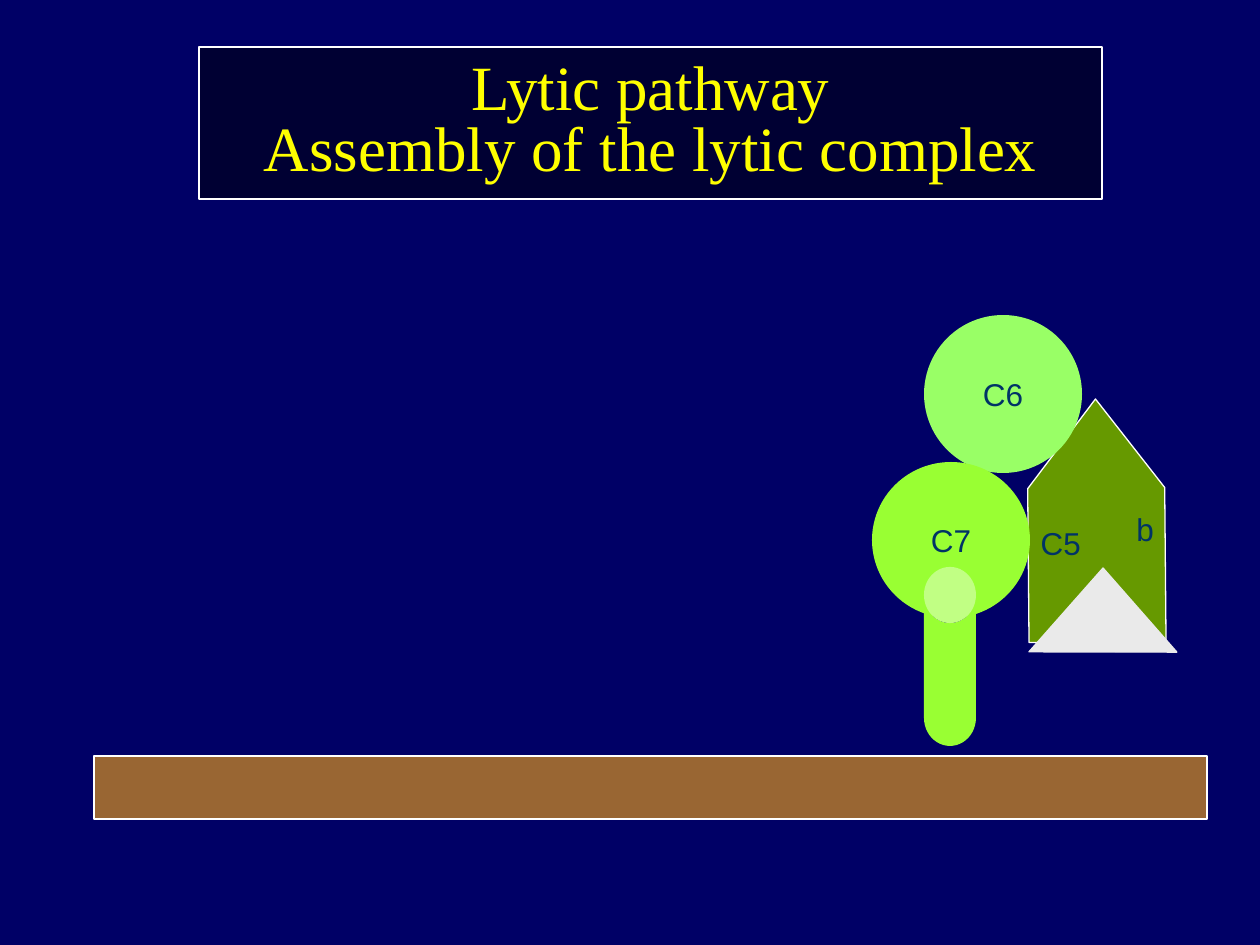
"""Build the slide on assembly of the lytic complex."""
from dataclasses import dataclass, field
from typing import Any, Optional

import pptx
import pptx.dml.color
import pptx.enum.shapes
import pptx.enum.text
import pptx.util

RGBColor = pptx.dml.color.RGBColor
Shape = pptx.enum.shapes.MSO_SHAPE
Anchor = pptx.enum.text.MSO_ANCHOR
CENTER = pptx.enum.text.PP_ALIGN.CENTER

PX = 914400 / 126
NAVY = RGBColor(0x00, 0x00, 0x66)
DARK_NAVY = RGBColor(0x00, 0x00, 0x33)
YELLOW = RGBColor(0xFF, 0xFF, 0x00)
WHITE = RGBColor(0xFF, 0xFF, 0xFF)
BROWN = RGBColor(0x99, 0x66, 0x33)
OLIVE = RGBColor(0x66, 0x99, 0x00)
PALE_GREY = RGBColor(0xEA, 0xEA, 0xEA)
MINT = RGBColor(0x99, 0xFF, 0x66)
LIME = RGBColor(0x99, 0xFF, 0x33)
LABEL_BLUE = RGBColor(0x00, 0x33, 0x66)


@dataclass(frozen=True)
class Part:
    """One piece of the complex, placed in px."""

    kind: Any
    box: tuple[int, int, int, int]
    fill: RGBColor
    line: Optional[RGBColor] = None
    label: str = ""
    rotation: float = 0
    adjustment: Optional[float] = None
    frame: dict[str, Any] = field(default_factory=dict)
    direction: str = "horz"


MIDDLE = {"vertical_anchor": Anchor.MIDDLE, "word_wrap": False}
TOP = {"vertical_anchor": Anchor.TOP, "word_wrap": True}

PARTS = [
    Part(Shape.RECTANGLE, (94, 756, 1113, 63), BROWN, WHITE),
    Part(Shape.PENTAGON, (975, 452, 243, 137), OLIVE, WHITE, "C5", 269.5, 0.65, MIDDLE, "eaVert"),
    Part(Shape.RECTANGLE, (1124, 504, 32, 63), OLIVE, label="b", frame=TOP),
    Part(Shape.FLOWCHART_MERGE, (1029, 568, 148, 84), PALE_GREY, PALE_GREY, rotation=180.1),
    Part(Shape.OVAL, (924, 315, 158, 158), MINT, label="C6", frame=MIDDLE),
    Part(Shape.OVAL, (872, 462, 158, 156), LIME, label="C7", frame=MIDDLE),
    Part(Shape.CAN, (924, 567, 52, 179), LIME, adjustment=1.08),
]


def set_all(target: Any, values: dict[str, Any]) -> None:
    """Set every attribute named in values."""
    for name, value in values.items():
        setattr(target, name, value)


def emu(*lengths: int) -> list[int]:
    """Turn px lengths into EMU."""
    return [round(length * PX) for length in lengths]


def paint(shape: Any, fill: RGBColor, line: Optional[RGBColor]) -> None:
    """Give a shape its fill and thin outline."""
    shape.fill.solid()
    shape.fill.fore_color.rgb = fill
    if line is None:
        shape.line.fill.background()
    else:
        shape.line.color.rgb = line
        shape.line.width = pptx.util.Pt(0.75)


def write(shape: Any, text: str, font_name: str, size: int, color: RGBColor) -> None:
    """Write centred text in a shape."""
    shape.text_frame.text = text
    paragraph = shape.text_frame.paragraphs[0]
    paragraph.alignment = CENTER
    for run in paragraph.runs:
        set_all(run.font, {"name": font_name, "size": pptx.util.Pt(size)})
        run.font.color.rgb = color


def draw_part(slide: Any, part: Part) -> None:
    """Draw one piece with its label."""
    shape = slide.shapes.add_shape(part.kind, *emu(*part.box))
    shape.shadow.inherit = False
    shape.rotation = part.rotation
    if part.adjustment is not None:
        shape.adjustments[0] = part.adjustment
    paint(shape, part.fill, part.line)
    if part.label:
        write(shape, part.label, "Arial", 18, LABEL_BLUE)
        set_all(shape.text_frame, part.frame)
        shape.text_frame._txBody.bodyPr.set("vert", part.direction)


def draw_title(slide: Any) -> None:
    """Place the title in its framed box."""
    title = slide.shapes.title
    box = dict(zip(("left", "top", "width", "height"), emu(199, 47, 903, 152)))
    set_all(title, box)
    paint(title, DARK_NAVY, WHITE)
    write(title, "Lytic pathway\vAssembly of the lytic complex", "Times New Roman", 36, YELLOW)
    title.text_frame.paragraphs[0].line_spacing = 0.8
    set_all(title.text_frame, {
        "vertical_anchor": Anchor.MIDDLE,
        "word_wrap": True,
        "auto_size": pptx.enum.text.MSO_AUTO_SIZE.NONE,
    })


def main() -> None:
    """Build and save the slide."""
    deck = pptx.Presentation()
    set_all(deck, {"slide_width": pptx.util.Inches(10), "slide_height": pptx.util.Inches(7.5)})
    slide = deck.slides.add_slide(deck.slide_layouts[5])
    slide.background.fill.solid()
    slide.background.fill.fore_color.rgb = NAVY
    draw_title(slide)
    for part in PARTS:
        draw_part(slide, part)
    deck.save("out.pptx")


if __name__ == "__main__":
    main()
